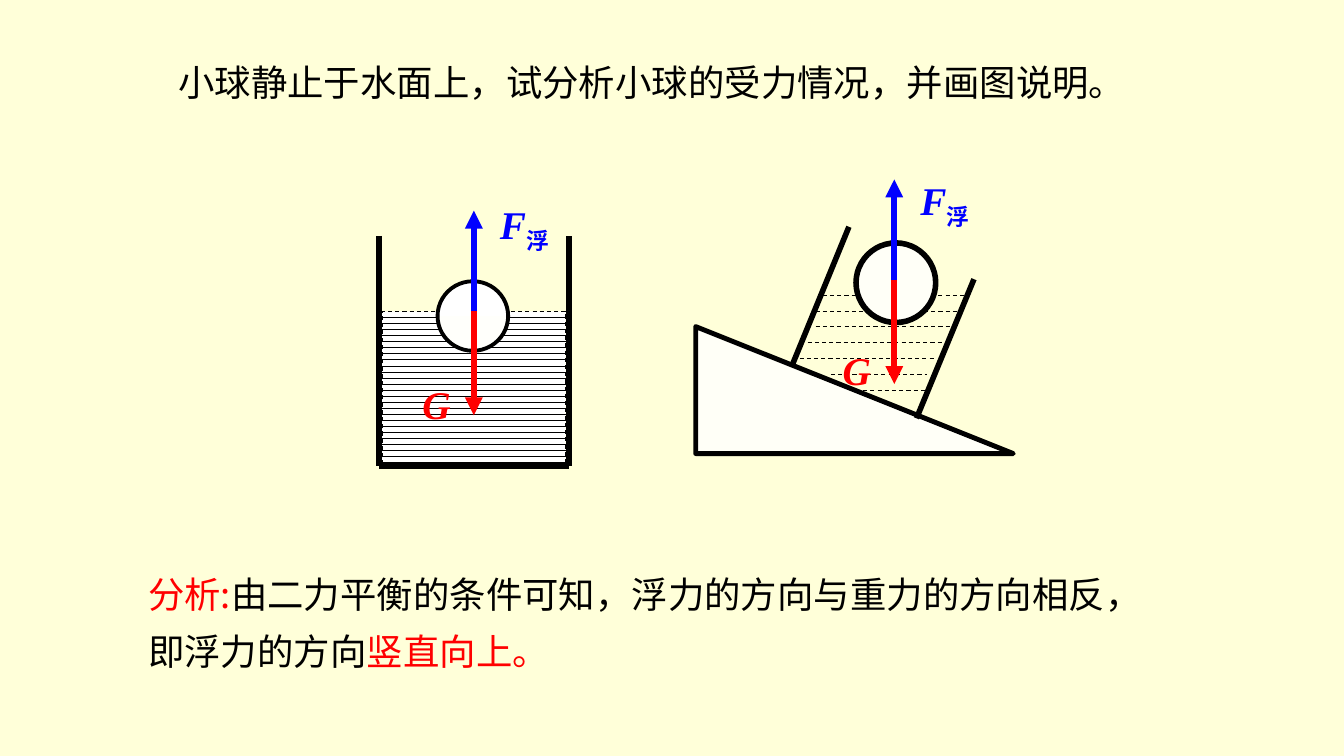
from lxml.etree import SubElement
from pptx import Presentation
from pptx.dml.color import RGBColor
from pptx.enum.dml import MSO_LINE, MSO_PATTERN
from pptx.enum.shapes import MSO_CONNECTOR, MSO_SHAPE
from pptx.oxml.ns import qn
from pptx.util import Inches, Pt

BLACK = RGBColor(0x00, 0x00, 0x00)
WHITE = RGBColor(0xFF, 0xFF, 0xFF)
RED = RGBColor(0xFF, 0x00, 0x00)
BLUE = RGBColor(0x00, 0x00, 0xFF)
CREAM = RGBColor(0xFF, 0xFF, 0xD9)
IVORY = RGBColor(0xFF, 0xFF, 0xF7)
PALE = RGBColor(0xFF, 0xFF, 0xFB)
CHINESE = "Noto Sans CJK SC"
LATIN = "Times New Roman"
FORCE_LENGTH = 1.03


def set_line(line, width, dashed=False):
    """Give a black outline of the given width in points."""
    line.color.rgb = BLACK
    line.width = Pt(width)
    if dashed:
        line.dash_style = MSO_LINE.DASH


def add_line(slide, start, end, width, dashed=False):
    """Draw a straight black line between two points in inches."""
    points = [Inches(value) for value in (*start, *end)]
    connector = slide.shapes.add_connector(MSO_CONNECTOR.STRAIGHT, *points)
    set_line(connector.line, width, dashed)
    SubElement(connector._element.spPr, qn("a:effectLst"))
    return connector


def add_shape(slide, kind, box, width, dashed=False):
    """Add an outlined preset shape with an ivory fill."""
    shape = slide.shapes.add_shape(kind, *[Inches(value) for value in box])
    shape.shadow.inherit = False
    shape.fill.solid()
    shape.fill.fore_color.rgb = IVORY
    set_line(shape.line, width, dashed)
    return shape


def add_text(slide, box, runs, spacing=1.0):
    """Add a wrapped one-paragraph text box from (text, format) pairs."""
    text_box = slide.shapes.add_textbox(*[Inches(value) for value in box])
    text_box.text_frame.word_wrap = True
    paragraph = text_box.text_frame.paragraphs[0]
    paragraph.line_spacing = spacing
    for text, color, style in runs:
        run = paragraph.add_run()
        run.text = text
        run.font.color.rgb = color
        for name, value in style.items():
            setattr(run.font, name, value)
        SubElement(run._r.rPr, qn("a:ea")).set("typeface", CHINESE)
    return paragraph


def add_force(slide, x, y, direction, color):
    """Draw a vertical force arrow from a point; direction -1 is up."""
    arrow = add_line(slide, (x, y), (x, y + direction * FORCE_LENGTH), 4.25)
    arrow.line.color.rgb = color
    SubElement(arrow.line._get_or_add_ln(), qn("a:tailEnd")).set("type", "triangle")
    return arrow


def add_buoyancy(slide, x, y, label_top):
    """Draw the upward buoyancy arrow with its label."""
    add_force(slide, x, y, -1, BLUE)
    style = {"size": Pt(28), "name": LATIN, "bold": True}
    runs = [("F", BLUE, {**style, "italic": True}), ("浮", BLUE, {**style, "italic": False})]
    paragraph = add_text(slide, (x + 0.16, label_top, 0.94, 0.57), runs)
    paragraph.runs[1]._r.rPr.set("baseline", "-25000")


def add_gravity(slide, x, y, label_top):
    """Draw the downward gravity arrow with its label and return the arrow."""
    arrow = add_force(slide, x, y, 1, RED)
    style = {"size": Pt(28), "name": LATIN, "bold": True, "italic": True}
    add_text(slide, (x - 0.61, label_top, 0.94, 0.57), [("G", RED, style)])
    return arrow


def add_upright_vessel(slide, left, top, width, height):
    """Draw the level vessel with a floating ball and its two forces."""
    right, bottom, center = left + width, top + height, left + width / 2
    water = add_shape(slide, MSO_SHAPE.RECTANGLE,
                      (left + 0.03, top + 0.75, width - 0.06, 1.54), 0.75, True)
    water.fill.patterned()
    water.fill.pattern = MSO_PATTERN.DASHED_HORIZONTAL
    water.fill.fore_color.rgb = BLACK
    water.fill.back_color.rgb = WHITE
    corners = [(left, top), (left, bottom), (right, bottom), (right, top)]
    for start, end in zip(corners, corners[1:]):
        add_line(slide, start, end, 4.25)
    ball = add_shape(slide, MSO_SHAPE.OVAL, (center - 0.36, top + 0.45, 0.7, 0.69), 2.75)
    ball.fill.gradient()
    ball.fill.gradient_angle = 270
    for stop, color in zip(ball.fill.gradient_stops, (WHITE, PALE)):
        stop.color.rgb = color
    add_buoyancy(slide, center, top + 0.78, top - 0.4)
    gravity = add_gravity(slide, center, top + 0.75, top + 1.38)
    gravity.begin_connect(water, 0)


def add_tilted_vessel(slide, left, top, width, height):
    """Draw the vessel on an incline with a floating ball and its two forces."""
    add_shape(slide, MSO_SHAPE.RIGHT_TRIANGLE,
              (left, top + height - 1.26, width, 1.26), 3.5)
    add_line(slide, (left + 1.52, top), (left + 0.95, top + 1.39), 4)
    add_line(slide, (left + 2.19, top + 1.9), (left + 2.76, top + 0.52), 4)
    water_spans = [(1.26, 2.68), (1.19, 2.6), (1.19, 2.52), (1.11, 2.45),
                   (1.03, 2.37), (1.34, 2.29), (1.66, 2.29)]
    for row, (start, end) in enumerate(water_spans):
        y = top + 0.68 + row * 0.94 / 6
        add_line(slide, (left + start, y), (left + end, y), 0.75, True)
    add_shape(slide, MSO_SHAPE.OVAL, (left + 1.59, top + 0.16, 0.79, 0.79), 4)
    add_buoyancy(slide, left + 1.97, top + 0.56, top - 0.55)
    add_gravity(slide, left + 1.97, top + 0.53, top + 1.14)


def add_question(slide, *box):
    """Write the question at the top of the slide."""
    style = {"size": Pt(26), "name": CHINESE}
    question = "小球静止于水面上，试分析小球的受力情况，并画图说明。"
    add_text(slide, box, [(question, BLACK, style)], 1.25)


def add_analysis(slide, *box):
    """Write the analysis with its key words in red."""
    style = {"size": Pt(26), "name": CHINESE}
    runs = [("分析:", RED, style),
            ("由二力平衡的条件可知，浮力的方向与重力的方向相反，即浮力的方向", BLACK, style),
            ("竖直向上。", RED, style)]
    add_text(slide, box, runs, 1.3)


def main():
    """Build and save the buoyancy slide."""
    presentation = Presentation()
    presentation.slide_width = Inches(13.33)
    presentation.slide_height = Inches(7.5)
    slide = presentation.slides.add_slide(presentation.slide_layouts[6])
    slide.background.fill.solid()
    slide.background.fill.fore_color.rgb = CREAM
    add_upright_vessel(slide, 3.76, 2.34, 1.88, 2.28)
    add_tilted_vessel(slide, 6.9, 2.25, 3.15, 2.25)
    add_analysis(slide, 1.37, 5.5, 10.13, 1.24)
    add_question(slide, 1.67, 0.44, 9.58, 0.65)
    presentation.save("out.pptx")


if __name__ == "__main__":
    main()
